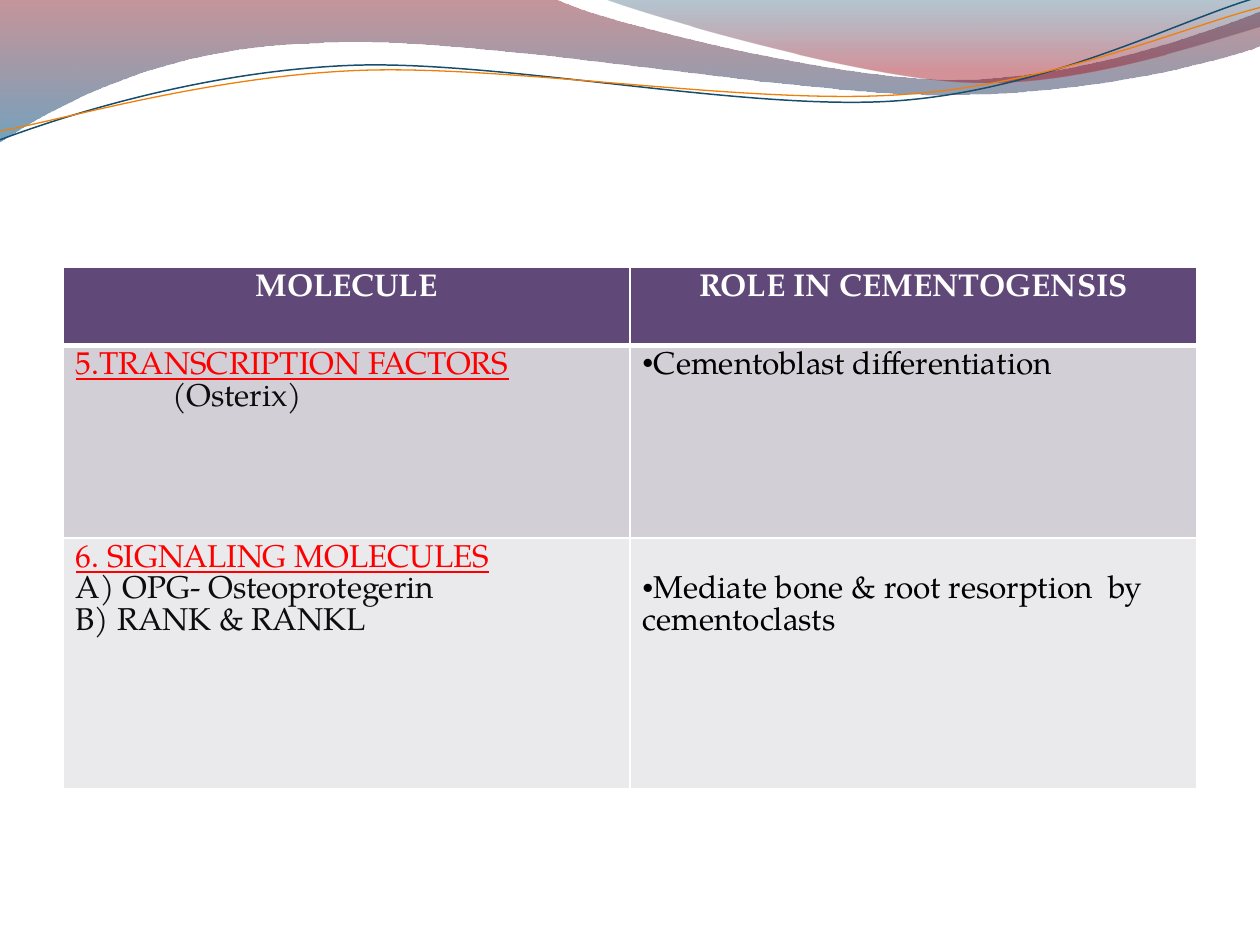
from lxml import etree
from pptx import Presentation
from pptx.dml.color import RGBColor
from pptx.enum.text import PP_ALIGN
from pptx.oxml import parse_xml
from pptx.oxml.ns import nsdecls, qn
from pptx.util import Inches, Pt

CENTER = PP_ALIGN.CENTER
LEFT = PP_ALIGN.LEFT
RED, DARK, BLACK, WHITE = "FF0000", "0D0D0D", "000000", "FFFFFF"

BACK_WAVE = [
    (0, 0), [(4.4, -0.01)],
    [(4.76, 0.17), (6.64, 0.63), (7.58, 0.63)],
    [(8.53, 0.63), (9.58, 0.26), (10, 0.09)],
    [(10.01, 0.36)],
    [(9.83, 0.44), (8.7, 0.76), (7.46, 0.75)],
    [(6.22, 0.75), (3.82, 0.28), (2.57, 0.34)],
    [(1.29, 0.36), (0.46, 0.83), (-0.01, 1.13)],
]
FRONT_WAVE = [
    (4.79, -0.01),
    [(5.09, 0.11), (6.82, 0.62), (7.69, 0.65)],
    [(8.56, 0.69), (9.61, 0.32), (10, 0.21)],
    [(10, 0)],
]
BLUE_CURVE = [
    (0, 1.11),
    [(0.48, 0.93), (1.58, 0.57), (2.77, 0.52)],
    [(3.95, 0.47), (5.93, 0.89), (7.13, 0.8)],
    [(8.33, 0.71), (9.38, 0.15), (9.98, -0.02)],
]
ORANGE_CURVE = [
    (0, 1.04),
    [(0.47, 0.96), (1.64, 0.61), (2.83, 0.56)],
    [(4.03, 0.51), (5.97, 0.84), (7.17, 0.75)],
    [(8.36, 0.67), (9.41, 0.21), (10, 0.06)],
]


def rgb(value):
    return RGBColor.from_string(value)


class Deck:
    """Holds the text style and the current slide."""

    def __init__(self, slide, font="TeX Gyre Pagella", size=18):
        self.s, self.font, self.size = slide, font, size

    def outline(self, segments, close):
        start, *parts = segments
        points = [(Inches(x), Inches(y)) for part in parts for x, y in part]
        builder = self.s.shapes.build_freeform(Inches(start[0]), Inches(start[1]))
        builder.add_line_segments(points, close=close)
        sp = builder.convert_to_shape()
        sp.shadow.inherit = False
        edges = iter(list(sp._element.iter(qn("a:lnTo"))))
        for part in parts:
            group = [next(edges) for _ in part]
            if len(group) == 3:
                curve = etree.Element(qn("a:cubicBezTo"))
                group[0].addprevious(curve)
                for edge in group:
                    curve.append(edge[0])
                    edge.getparent().remove(edge)
        return sp

    def wave(self, segments, stops):
        sp = self.outline(segments, True)
        sp.line.fill.background()
        sp.fill.gradient()
        sp.fill.gradient_angle = 270
        for stop, (position, color, alpha) in zip(sp.fill.gradient_stops, stops):
            stop.position = position
            stop.color.rgb = rgb(color)
        colors = sp._element.spPr.find(qn("a:gradFill")).iter(qn("a:srgbClr"))
        for element, (position, color, alpha) in zip(colors, stops):
            etree.SubElement(element, qn("a:alpha"), val=str(alpha * 1000))

    def curve(self, segments, color, width):
        sp = self.outline(segments, False)
        sp.fill.background()
        sp.line.color.rgb = rgb(color)
        sp.line.width = Pt(width)

    def table(self, x, y, widths, heights):
        table = self.s.shapes.add_table(
            len(heights), len(widths), Inches(x), Inches(y),
            Inches(sum(widths)), Inches(sum(heights))).table
        for column, width in zip(table.columns, widths):
            column.width = Inches(width)
        for row, height in zip(table.rows, heights):
            row.height = Inches(height)
        return table

    def borders(self, cell, top, bottom):
        tcPr = cell._tc.get_or_add_tcPr()
        for side, width in (("L", 1), ("R", 1), ("T", top), ("B", bottom)):
            tcPr.append(parse_xml(
                f'<a:ln{side} {nsdecls("a")} w="{Pt(width)}"><a:solidFill>'
                f'<a:srgbClr val="{WHITE}"/></a:solidFill></a:ln{side}>'))

    def cell(self, cell, fill, lines, top=1, bottom=1, align=LEFT, bold=False):
        self.borders(cell, top, bottom)
        cell.fill.solid()
        cell.fill.fore_color.rgb = rgb(fill)
        tf = cell.text_frame
        for i, (text, color, options) in enumerate(lines):
            p = tf.add_paragraph() if i else tf.paragraphs[0]
            p.alignment = align
            pPr = p._p.get_or_add_pPr()
            pPr.set("marL", str(Inches(options.get("indent", 0))))
            pPr.set("indent", "0")
            if options.get("bullet"):
                etree.SubElement(pPr, qn("a:buChar"), char="•")
            r = p.add_run()
            r.text = text
            r.font.name = self.font
            r.font.size = Pt(self.size)
            r.font.bold = bold
            r.font.underline = options.get("underline", False)
            r.font.color.rgb = rgb(color)


def main():
    prs = Presentation()
    prs.slide_width, prs.slide_height = Inches(10), Inches(7.5)
    deck = Deck(prs.slides.add_slide(prs.slide_layouts[6]))

    deck.wave(BACK_WAVE, [(0, "7E1621", 45), (1, "005689", 55)])
    deck.wave(FRONT_WAVE, [(0, "094467", 30), (0.8, "A10F1F", 45)])
    deck.curve(BLUE_CURVE, "184E6D", 0.85)
    deck.curve(ORANGE_CURVE, "F07F09", 0.75)

    table = deck.table(0.5, 2.12, [4.5, 4.5], [0.62, 1.53, 1.99])
    for column, heading in enumerate(["MOLECULE", "ROLE IN CEMENTOGENSIS"]):
        deck.cell(table.cell(0, column), "604878", [(heading, WHITE, {})],
                  bottom=3, align=CENTER, bold=True)

    heading, bullet = {"underline": True}, {"bullet": True}
    rows = [
        ("D2CFD6", 3,
         [("5.TRANSCRIPTION FACTORS", RED, heading),
          ("(Osterix)", DARK, {"indent": 0.77})],
         [("Cementoblast differentiation", BLACK, bullet)]),
        ("EAE9EC", 1,
         [("6. SIGNALING MOLECULES", RED, heading),
          ("A) OPG- Osteoprotegerin", DARK, {}),
          ("B) RANK & RANKL", DARK, {})],
         [("Mediate bone & root resorption  by cementoclasts", BLACK, bullet)]),
    ]
    for i, (fill, top, molecule, role) in enumerate(rows, 1):
        deck.cell(table.cell(i, 0), fill, molecule, top=top)
        deck.cell(table.cell(i, 1), fill, role, top=top)
    table.cell(2, 1).margin_top = Inches(0.3)

    prs.save("out.pptx")


if __name__ == "__main__":
    main()
